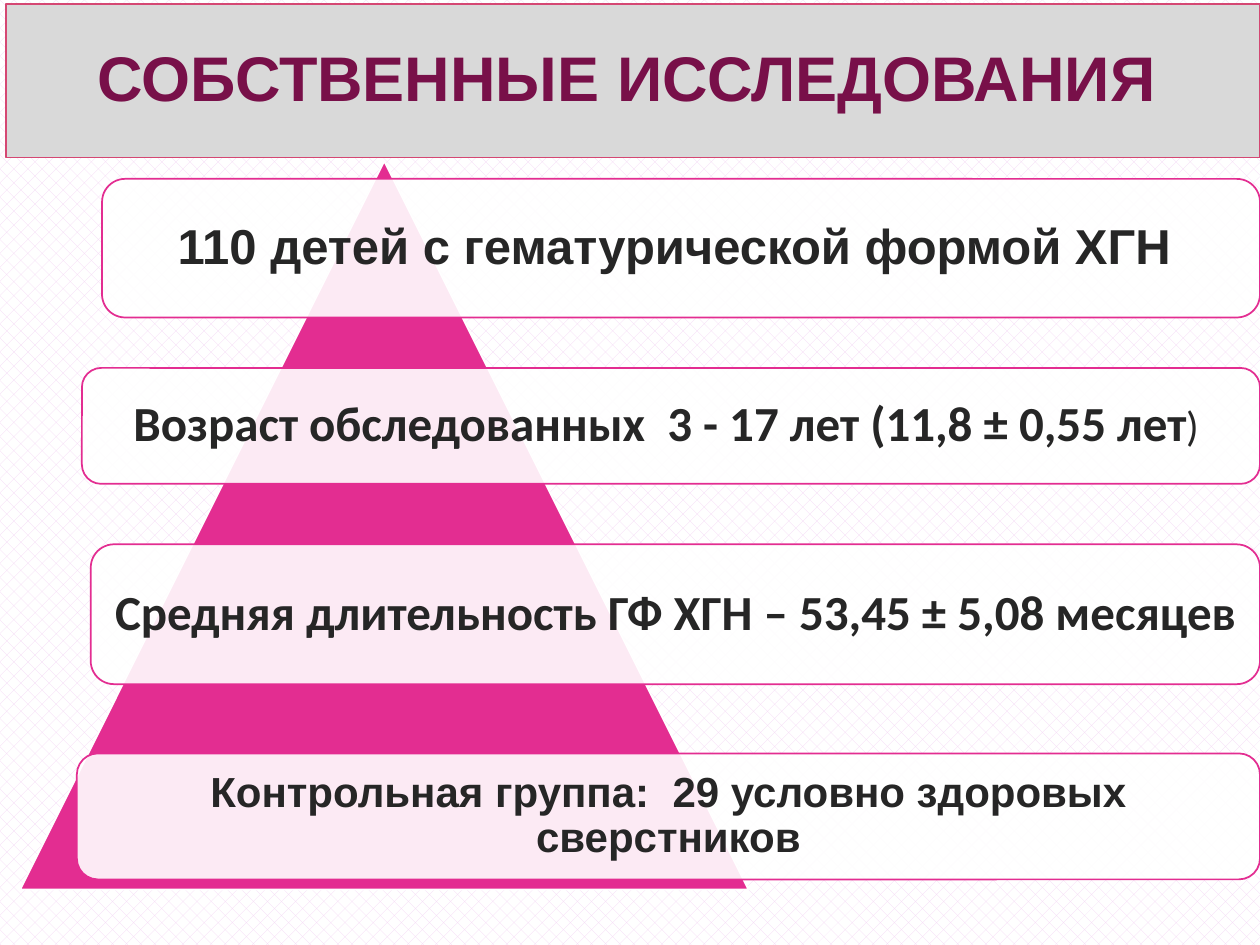
from dataclasses import dataclass

from lxml import etree
from pptx import Presentation
from pptx import util as u
from pptx.dml.color import RGBColor
from pptx.enum import dml, shapes, text
from pptx.oxml.ns import qn
from pptx.shapes.autoshape import Shape
from pptx.slide import Slide

# Grid: 100 columns by 75 rows of equal cells
COLUMNS, ROWS = 100, 75
CELL = u.Inches(0.1)

PINK = RGBColor(0xE3, 0x2D, 0x91)
ROSE = RGBColor(0xD5, 0x47, 0x73)
PLUM = RGBColor(0x78, 0x10, 0x49)
LILAC = RGBColor(0xF4, 0xD5, 0xF5)
GREY = RGBColor(0xD9, 0xD9, 0xD9)
INK = RGBColor(0x26, 0x26, 0x26)
WHITE = RGBColor(0xFF, 0xFF, 0xFF)


@dataclass(frozen=True)
class Span:
    words: str
    size: int
    font: str = "Arial"
    bold: bool = True
    color: RGBColor = INK


@dataclass(frozen=True)
class Band:
    """A rounded bar that runs from its left column to the right edge."""
    left: float
    top: float
    height: float
    inset: float
    spans: tuple[Span, ...]


TITLE = Span("СОБСТВЕННЫЕ ИССЛЕДОВАНИЯ", 36, color=PLUM)
BANDS = (
    Band(8.1, 14.2, 11, 1.2,
         (Span("110 детей с гематурической формой ХГН ", 28),)),
    Band(6.5, 29.2, 9.2, 1.2,
         (Span("Возраст обследованных  3 - 17 лет (11,8 ± 0,55 лет", 28, "Calibri"),
          Span(") ", 24, "Calibri", bold=False))),
    Band(7.2, 43.2, 11.1, 1.2,
         (Span("Средняя длительность ГФ ХГН – 53,45 ± 5,08 месяцев", 28, "Calibri"),)),
    Band(6.1, 59.8, 10, 1,
         (Span("Контрольная группа:  29 условно здоровых сверстников", 24),)),
)


def cells(count: float) -> int:
    return round(count * CELL)


def add_box(page: Slide, kind: shapes.MSO_SHAPE, left: float, top: float,
            width: float, height: float, fill: RGBColor, line: RGBColor) -> Shape:
    box = page.shapes.add_shape(kind, *map(cells, (left, top, width, height)))
    box.shadow.inherit = False
    box.fill.solid()
    box.fill.fore_color.rgb = fill
    box.line.color.rgb = line
    box.line.width = u.Pt(1)
    return box


def set_opacity(box: Shape, percent: int) -> None:
    color = box.fill._xPr.find(f"{qn('a:solidFill')}/{qn('a:srgbClr')}")
    etree.SubElement(color, qn("a:alpha"), val=str(percent * 1000))


def write(box: Shape, spans: tuple[Span, ...],
          insets: tuple[float, float, float, float]) -> None:
    """Write one centred paragraph; insets are left, top, right, bottom."""
    frame = box.text_frame
    frame.word_wrap = True
    frame.vertical_anchor = text.MSO_ANCHOR.MIDDLE
    (frame.margin_left, frame.margin_top,
     frame.margin_right, frame.margin_bottom) = map(cells, insets)
    para = frame.paragraphs[0]
    para.alignment = text.PP_ALIGN.CENTER
    para.line_spacing = 0.9
    for item in spans:
        span = para.add_run()
        span.text = item.words
        span.font.size = u.Pt(item.size)
        span.font.name = item.font
        span.font.bold = item.bold
        span.font.color.rgb = item.color


def add_band(page: Slide, band: Band) -> None:
    box = add_box(page, shapes.MSO_SHAPE.ROUNDED_RECTANGLE, band.left, band.top,
                  COLUMNS - band.left, band.height, WHITE, PINK)
    set_opacity(box, 90)
    write(box, band.spans, (band.inset,) * 4)


def main() -> None:
    deck = Presentation()
    deck.slide_width, deck.slide_height = cells(COLUMNS), cells(ROWS)
    page = deck.slides.add_slide(deck.slide_layouts[6])

    # Patterned background
    backdrop = page.background.fill
    backdrop.patterned()
    backdrop.pattern = dml.MSO_PATTERN.PERCENT_25
    backdrop.fore_color.rgb = LILAC
    backdrop.back_color.rgb = WHITE

    # Title bar
    title = add_box(page, shapes.MSO_SHAPE.RECTANGLE, 0.5, 0.3, 99.5, 12.2, GREY, ROSE)
    write(title, (TITLE,), (0, 0.5, 1, 0.5))

    # Pyramid with its bands on top
    add_box(page, shapes.MSO_SHAPE.ISOSCELES_TRIANGLE, 1.6, 12.8, 57.8, 57.8, PINK, WHITE)
    for band in BANDS:
        add_band(page, band)

    deck.save("out.pptx")


if __name__ == "__main__":
    main()
